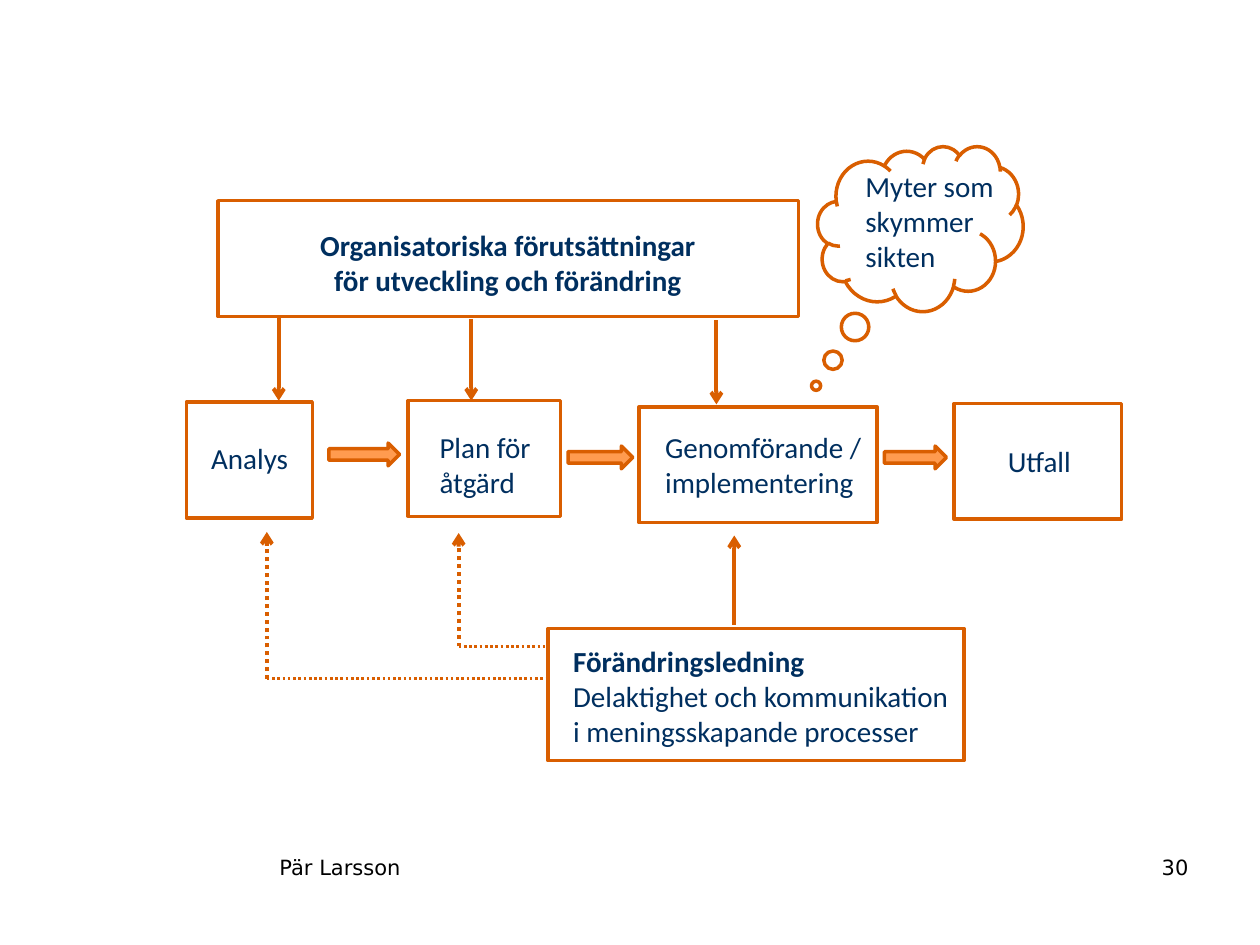
from pptx import Presentation
from pptx.dml.color import RGBColor
from pptx.enum.dml import MSO_LINE
from pptx.enum.shapes import MSO_CONNECTOR, MSO_SHAPE
from pptx.enum.text import MSO_ANCHOR, MSO_AUTO_SIZE, PP_ALIGN
from pptx.oxml.ns import qn
from pptx.util import Pt
from lxml import etree

ORANGE = RGBColor(0xD9, 0x5E, 0x00)
LIGHT_ORANGE = RGBColor(0xFF, 0x9B, 0x4F)
NAVY = RGBColor(0x00, 0x2F, 0x5F)
BLACK = RGBColor(0x00, 0x00, 0x00)

RECTANGLE = MSO_SHAPE.RECTANGLE
CLOUD = MSO_SHAPE.CLOUD_CALLOUT
RIGHT_ARROW = MSO_SHAPE.RIGHT_ARROW
STRAIGHT = MSO_CONNECTOR.STRAIGHT
DOTTED = MSO_LINE.ROUND_DOT
TOP, MIDDLE = MSO_ANCHOR.TOP, MSO_ANCHOR.MIDDLE
LEFT, CENTER, RIGHT = PP_ALIGN.LEFT, PP_ALIGN.CENTER, PP_ALIGN.RIGHT
FIT, FIXED = MSO_AUTO_SIZE.SHAPE_TO_FIT_TEXT, MSO_AUTO_SIZE.NONE

LABEL_FONT = {"name": "Calibri", "size": Pt(16.6)}
FOOTER_FONT = {"name": "DejaVu Sans", "size": Pt(12)}
LABEL_FRAME = {"word_wrap": False, "auto_size": FIT, "vertical_anchor": TOP}
WRAPPED_FRAME = {**LABEL_FRAME, "word_wrap": True}
FOOTER_FRAME = {"word_wrap": True, "auto_size": FIXED, "vertical_anchor": TOP}
NUMBER_FRAME = {**FOOTER_FRAME, "vertical_anchor": MIDDLE}


def apply(target, values):
    for name, value in values.items():
        setattr(target, name, value)


class Diagram:
    def __init__(self, slide):
        self.slide = slide

    def shape(self, kind, box, fill=None, adjustments=()):
        shape = self.slide.shapes.add_shape(kind, *map(Pt, box))
        shape.shadow.inherit = False
        for index, value in enumerate(adjustments):
            shape.adjustments[index] = value
        if fill is None:
            shape.fill.background()
        else:
            shape.fill.solid()
            shape.fill.fore_color.rgb = fill
        shape.line.color.rgb = ORANGE
        shape.line.width = Pt(2)

    def text(self, box, lines, font=LABEL_FONT, color=NAVY, frame=LABEL_FRAME,
             alignment=LEFT, bold_lines=0):
        text_frame = self.slide.shapes.add_textbox(*map(Pt, box)).text_frame
        apply(text_frame, frame)
        text_frame.text = "\n".join(lines)
        for index, paragraph in enumerate(text_frame.paragraphs):
            paragraph.alignment = alignment
            for run in paragraph.runs:
                apply(run.font, {**font, "bold": index < bold_lines})
                run.font.color.rgb = color

    def line(self, start, end, width=2.25, dash=None, arrow=True):
        connector = self.slide.shapes.add_connector(
            STRAIGHT, *map(Pt, (*start, *end)))
        connector.line.color.rgb = ORANGE
        apply(connector.line, {"width": Pt(width), "dash_style": dash})
        if arrow:
            etree.SubElement(connector.line._get_or_add_ln(),
                             qn("a:tailEnd"), type="arrow")
        etree.SubElement(connector._element.spPr, qn("a:effectLst"))


def main():
    presentation = Presentation()
    presentation.slide_width, presentation.slide_height = Pt(720), Pt(540)
    diagram = Diagram(presentation.slides.add_slide(presentation.slide_layouts[6]))

    steps = [
        ((106.5, 229.8, 72, 66.2), (113.6, 248.4, 59, 27.4), ["Analys"]),
        ((233.3, 228.9, 87.1, 66.2), (244.1, 241.9, 67.7, 47.5),
         ["Plan för\våtgärd"]),
        ((365.1, 232.5, 136.1, 66.2), (373, 241.9, 128.2, 47.5),
         ["Genomförande /", "implementering"]),
        ((545.2, 230.5, 95.8, 66.2), (568.8, 249.8, 51.8, 27.4), ["Utfall"]),
    ]
    for box, label_box, lines in steps:
        diagram.shape(RECTANGLE, box)
        diagram.text(label_box, lines)

    for left, top, width in [(187.9, 253.2, 40.4), (324.6, 254.9, 37),
                             (505.4, 254.9, 35.5)]:
        diagram.shape(RIGHT_ARROW, (left, top, width, 13), LIGHT_ORANGE)

    diagram.shape(CLOUD, (467.3, 83.5, 117.4, 94.3), adjustments=(-0.508, 0.952))
    diagram.text((487.4, 92.9, 88.6, 67.7), ["Myter som", "skymmer", "sikten"])

    diagram.shape(RECTANGLE, (124.5, 114.7, 331.9, 66.2))
    diagram.text((174.2, 126.7, 231.8, 47.5),
                 ["Organisatoriska förutsättningar", "för utveckling och förändring"],
                 alignment=CENTER, bold_lines=2)
    for x, top, bottom in [(159.3, 181.4, 229), (269.3, 182.2, 229),
                           (409.4, 182.9, 231.1)]:
        diagram.line((x, top), (x, bottom))

    diagram.shape(RECTANGLE, (313.2, 359.1, 237.6, 75.6))
    diagram.text((320.4, 364.3, 231.8, 67.7),
                 ["Förändringsledning",
                  "Delaktighet och kommunikation i meningsskapande processer"],
                 frame=WRAPPED_FRAME, bold_lines=1)
    diagram.line((419.6, 357.1), (419.6, 306))
    for x, top, bottom in [(262.1, 304.6, 369.4), (152.5, 304, 387.8)]:
        diagram.line((x, bottom), (x, top), dash=DOTTED)
        diagram.line((x, bottom), (313.2, bottom), 1.5, DOTTED, arrow=False)

    diagram.text((152.6, 484.6, 353.5, 41), ["Pär Larsson"],
                 FOOTER_FONT, BLACK, FOOTER_FRAME)
    diagram.text((518.4, 484.6, 167.8, 22.3), ["30"],
                 FOOTER_FONT, BLACK, NUMBER_FRAME, RIGHT)
    presentation.save("out.pptx")


if __name__ == "__main__":
    main()
